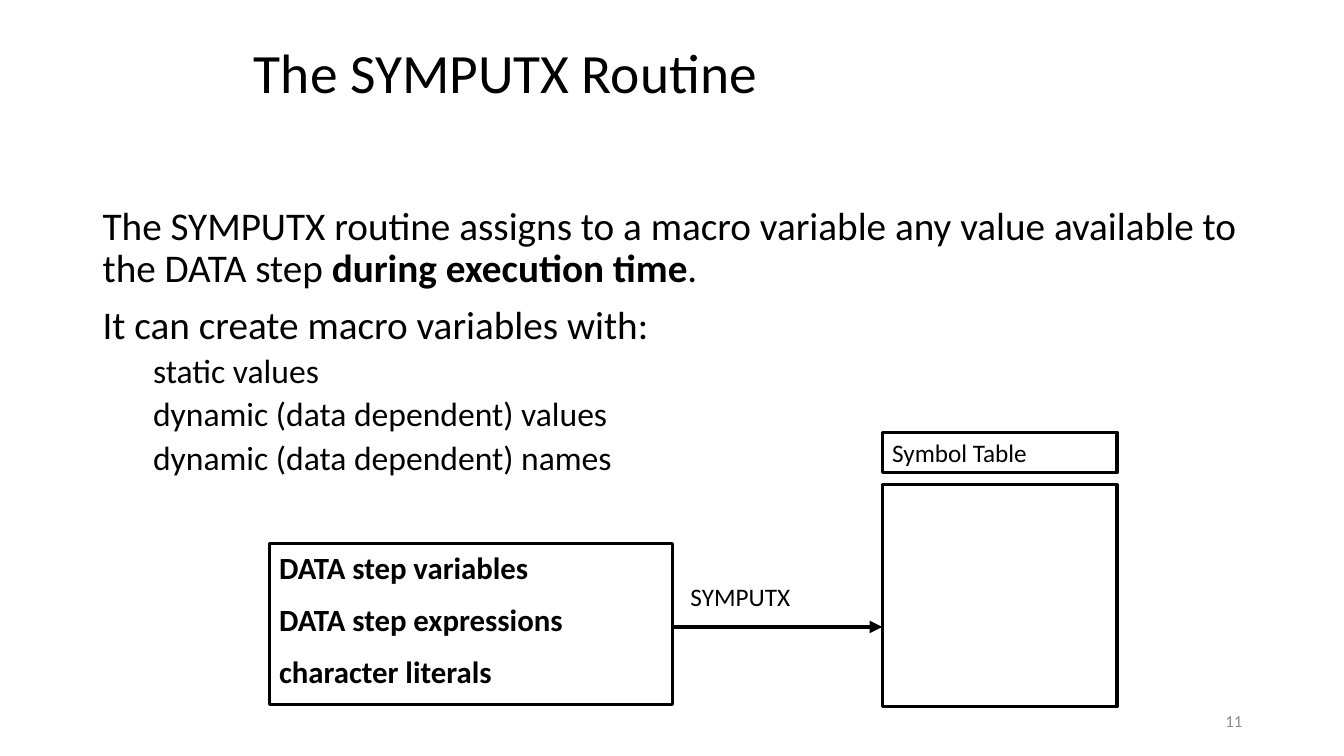
from dataclasses import dataclass

from lxml.etree import SubElement
from pptx import Presentation
from pptx.dml.color import RGBColor
from pptx.enum.shapes import MSO_CONNECTOR as Connector, MSO_SHAPE as Shape
from pptx.enum.text import MSO_ANCHOR as Anchor, PP_ALIGN as Align
from pptx.oxml.ns import qn
from pptx.util import Inches, Pt


@dataclass(frozen=True)
class Theme:
    font: str = "Calibri"
    ink: RGBColor = RGBColor(0x00, 0x00, 0x00)
    muted: RGBColor = RGBColor(0x8C, 0x8C, 0x8C)
    title: float = 39.6
    body: float = 28
    detail: float = 24
    source: float = 22
    label: float = 18
    number: float = 12
    outline: float = 2.25
    arrow: float = 3


THEME = Theme()


def style(paragraph, size, color=THEME.ink, bold=False):
    font = paragraph.font
    font.name, font.size, font.bold = THEME.font, Pt(size), bold
    font.color.rgb = color


def add_text(slide, box, anchor=Anchor.TOP, wrap=True):
    frame = slide.shapes.add_textbox(*map(Inches, box)).text_frame
    frame.word_wrap = wrap
    frame.vertical_anchor = anchor
    return frame


def add_title(slide, box, text):
    title = add_text(slide, box, Anchor.MIDDLE).paragraphs[0]
    title.text = text
    title.line_spacing = 0.9
    style(title, THEME.title)


def add_body(slide, box, points):
    """Place (level, runs) points, where each run is (text, bold)."""
    frame = add_text(slide, box)
    for index, (level, runs) in enumerate(points):
        point = frame.add_paragraph() if index else frame.paragraphs[0]
        point.level = level
        point.line_spacing = 0.9
        point.space_before = Pt(5 if level else 10)
        if level:
            point._p.get_or_add_pPr().set("marL", str(Inches(0.5)))
        style(point, THEME.detail if level else THEME.body)
        for text, bold in runs:
            run = point.add_run()
            run.text = text
            run.font.bold = bold


def add_page_number(slide, box, number):
    page = add_text(slide, box, Anchor.MIDDLE).paragraphs[0]
    page.text = number
    page.alignment = Align.RIGHT
    style(page, THEME.number, THEME.muted)


def add_outlined_box(slide, box, lines=(), size=THEME.label, bold=False):
    outlined = slide.shapes.add_shape(Shape.RECTANGLE, *map(Inches, box))
    outlined.shadow.inherit = False
    outlined.fill.background()
    outlined.line.color.rgb = THEME.ink
    outlined.line.width = Pt(THEME.outline)
    frame = outlined.text_frame
    frame.word_wrap = True
    frame.vertical_anchor = Anchor.TOP
    for index, text in enumerate(lines):
        line = frame.add_paragraph() if index else frame.paragraphs[0]
        line.text = text
        line.alignment = Align.LEFT
        if index:
            line.space_before = Pt(size / 2)
        style(line, size, bold=bold)


def add_arrow(slide, start, end, y):
    arrow = slide.shapes.add_connector(
        Connector.STRAIGHT, Inches(start), Inches(y), Inches(end), Inches(y))
    arrow.line.color.rgb = THEME.ink
    arrow.line.width = Pt(THEME.arrow)
    SubElement(arrow.line._get_or_add_ln(), qn("a:tailEnd"), type="triangle")
    SubElement(arrow._element.spPr, qn("a:effectLst"))


def add_symbol_flow(slide, box):
    """Draw the data sources, the routine's arrow and the symbol table."""
    left, top, width, height = box
    source_width, source_height = 4, 1.6
    table_width, header_height, gap = 2.33, 0.4, 0.12
    source_top = top + 1.1
    source_right = left + source_width
    table_left = left + width - table_width
    table_top = top + header_height + gap
    arrow_y = source_top + 0.83

    add_outlined_box(
        slide, (left, source_top, source_width, source_height),
        ("DATA step variables", "DATA step expressions", "character literals"),
        THEME.source, bold=True)
    add_outlined_box(
        slide, (table_left, top, table_width, header_height), ("Symbol Table",))
    add_outlined_box(
        slide, (table_left, table_top, table_width, top + height - table_top))
    add_arrow(slide, source_right, table_left, arrow_y)
    routine = add_text(
        slide, (source_right + 0.08, arrow_y - 0.5, 1.2, 0.4), wrap=False).paragraphs[0]
    routine.text = "SYMPUTX"
    style(routine, THEME.label)


def main():
    deck = Presentation()
    deck.slide_width, deck.slide_height = Inches(13.33), Inches(7.5)
    slide = deck.slides.add_slide(deck.slide_layouts[6])
    add_title(slide, (2.42, 0.5, 9.16, 0.5), "The SYMPUTX Routine")
    add_body(slide, (0.92, 2, 11.5, 4.76), [
        (0, [("The SYMPUTX routine assigns to a macro variable any value "
              "available to the DATA step ", False),
             ("during execution time", True), (".", False)]),
        (0, [("It can create macro variables with:", False)]),
        (1, [("static values", False)]),
        (1, [("dynamic (data dependent) values", False)]),
        (1, [("dynamic (data dependent) names", False)]),
    ])
    add_page_number(slide, (9.42, 6.95, 3, 0.4), "11")
    add_symbol_flow(slide, (2.67, 4.29, 8.41, 2.72))
    deck.save("out.pptx")


if __name__ == "__main__":
    main()
